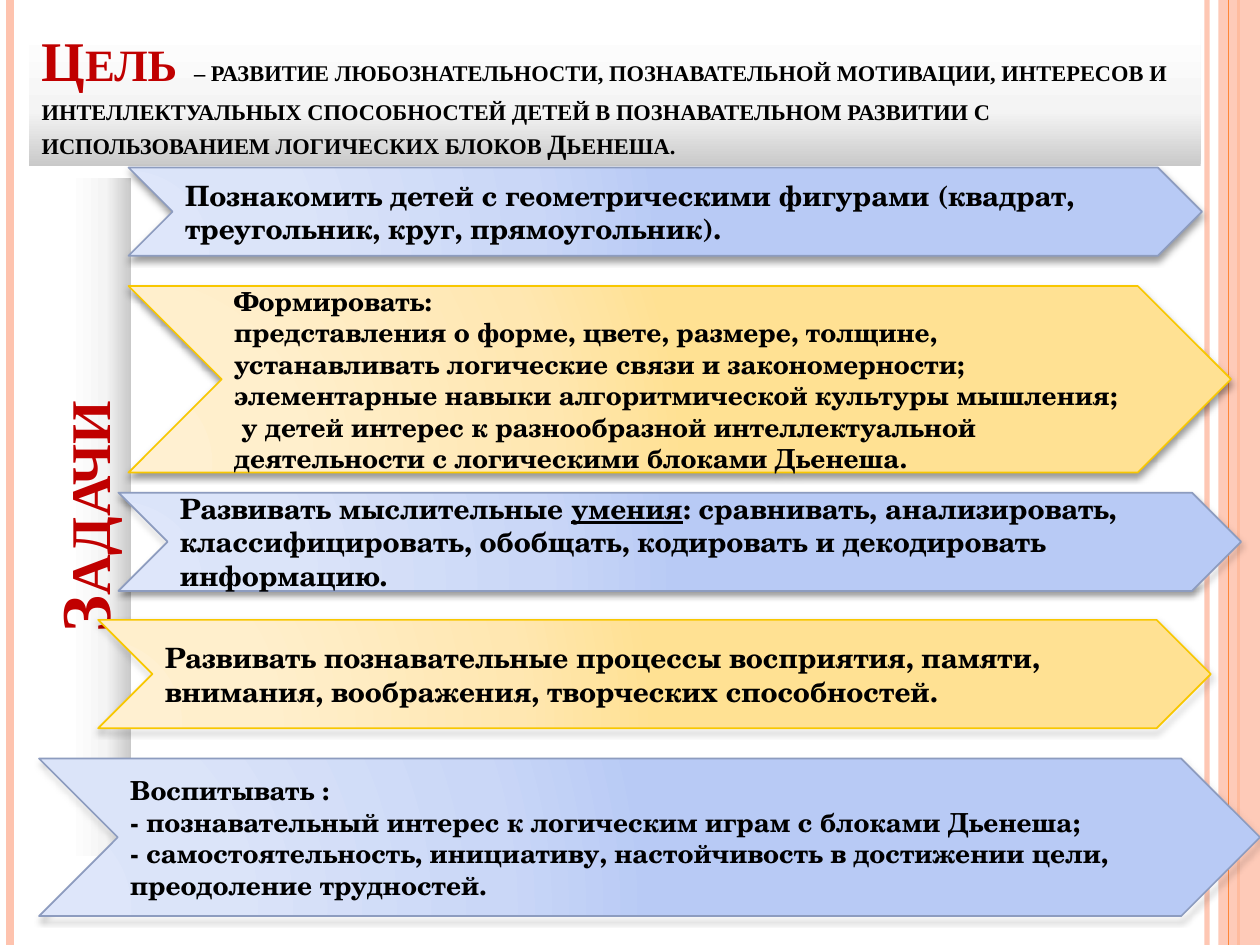
import pptx
import pptx.util
import pptx.oxml
import pptx.oxml.ns
import pptx.dml.color
import pptx.enum.shapes
import pptx.enum.text

Inches = pptx.util.Inches
Pt = pptx.util.Pt
qn = pptx.oxml.ns.qn
ALIGN = pptx.enum.text.PP_ALIGN
ANCHOR = pptx.enum.text.MSO_ANCHOR

COLORS = {
    "peach": "FEC3AE",
    "orange": "FE8637",
    "red": "C00000",
    "black": "000000",
    "blue_edge": "8D9CBF",
    "yellow_edge": "F8C700",
}
GREY = [(0, "C9C9C9"), (40, "F4F4F4"), (100, "FFFFFF")]
BLUE = [(0, "DEE6FA"), (30, "DBE4F9"), (75, "CAD7F7"), (100, "B8CAF5")]
YELLOW = [(0, "FFF0D1"), (30, "FFEFCC"), (75, "FFE7B1"), (100, "FFE193")]
UPRIGHT = '<a:lin ang="16200000" scaled="0"/>'
RADIAL = ('<a:path path="circle">'
          '<a:fillToRect l="5000" t="100000" r="120000" b="10000"/></a:path>')
SERIF = "Times New Roman"
SCHOOL = "TeX Gyre Schola"


def rgb(name):
    return pptx.dml.color.RGBColor.from_string(COLORS[name])


def place(shape, left, top, width, height):
    shape.left, shape.top = Inches(left), Inches(top)
    shape.width, shape.height = Inches(width), Inches(height)


def set_alpha(shape, percent):
    color = next(shape._element.spPr.iter(qn("a:srgbClr")))
    pptx.oxml.ns.qn("a:alpha")
    alpha = color.makeelement(qn("a:alpha"), {"val": str(percent * 1000)})
    color.append(alpha)


def set_gradient(shape, stops, direction):
    shape.fill.gradient()
    properties = shape._element.spPr
    stop_xml = "".join(
        f'<a:gs pos="{position * 1000}"><a:srgbClr val="{color}"/></a:gs>'
        for position, color in stops)
    gradient = pptx.oxml.parse_xml(
        f'<a:gradFill {pptx.oxml.ns.nsdecls("a")} rotWithShape="1">'
        f'<a:gsLst>{stop_xml}</a:gsLst>{direction}</a:gradFill>')
    properties.replace(properties.find(qn("a:gradFill")), gradient)


def set_shadow(shape):
    shape.shadow.inherit = False
    shadow = pptx.oxml.parse_xml(
        f'<a:outerShdw {pptx.oxml.ns.nsdecls("a")} blurRad="{Pt(4)}" dist="{Pt(2)}" '
        'dir="5400000" rotWithShape="0"><a:srgbClr val="000000">'
        '<a:alpha val="40000"/></a:srgbClr></a:outerShdw>')
    shape._element.spPr.find(qn("a:effectLst")).append(shadow)


def add_run(paragraph, text, font, size, color, small_caps=False, underline=False):
    run = paragraph.add_run()
    run.text = text
    run.font.name = font
    run.font.size = Pt(size)
    run.font.bold = True
    run.font.color.rgb = rgb(color)
    if underline:
        run.font.underline = True
    if small_caps:
        run.font._element.set("cap", "small")


def prepare_frame(shape, anchor):
    frame = shape.text_frame
    frame.word_wrap = True
    frame.auto_size = pptx.enum.text.MSO_AUTO_SIZE.NONE
    frame.vertical_anchor = anchor
    return frame


def add_stripe(slide, x, color, width, alpha=None):
    stripe = slide.shapes.add_connector(
        pptx.enum.shapes.MSO_CONNECTOR.STRAIGHT,
        Inches(x), Inches(0), Inches(x), Inches(7.5))
    stripe.line.color.rgb = rgb(color)
    stripe.line.width = Pt(width)
    stripe._element.spPr.append(pptx.oxml.parse_xml(
        f'<a:effectLst {pptx.oxml.ns.nsdecls("a")}/>'))
    if alpha:
        set_alpha(stripe, alpha)


def add_side_band(slide):
    band = slide.shapes.add_shape(
        pptx.enum.shapes.MSO_SHAPE.RECTANGLE,
        Inches(9.67), Inches(0), Inches(0.33), Inches(7.5))
    band.fill.solid()
    band.fill.fore_color.rgb = rgb("peach")
    band.line.fill.background()
    band.shadow.inherit = False
    set_alpha(band, 87)


def add_goal(slide):
    goal = slide.shapes.title
    place(goal, 0.23, 0.23, 9.3, 1.09)
    set_gradient(goal, GREY, UPRIGHT)
    paragraph = prepare_frame(goal, ANCHOR.BOTTOM).paragraphs[0]
    paragraph.alignment = ALIGN.LEFT
    add_run(paragraph, "Цель ", SERIF, 32, "red", small_caps=True)
    add_run(paragraph, " – развитие любознательности, познавательной мотивации, "
            "интересов и интеллектуальных способностей детей в познавательном "
            "развитии с использованием логических блоков Дьенеша.",
            SERIF, 16, "black", small_caps=True)


def add_tasks_heading(slide):
    heading = slide.shapes.add_textbox(
        Inches(-1.9), Inches(3.85), Inches(5.38), Inches(0.5))
    heading.rotation = 270
    set_gradient(heading, GREY, UPRIGHT)
    paragraph = prepare_frame(heading, ANCHOR.BOTTOM).paragraphs[0]
    paragraph.alignment = ALIGN.CENTER
    add_run(paragraph, "Задачи", SERIF, 40, "red", small_caps=True)


def add_task(slide, box, stops, edge, size, paragraphs):
    task = slide.shapes.add_shape(
        pptx.enum.shapes.MSO_SHAPE.CHEVRON, *(Inches(length) for length in box))
    set_gradient(task, stops, RADIAL)
    task.line.color.rgb = rgb(edge)
    task.line.width = Pt(1)
    set_shadow(task)
    frame = prepare_frame(task, ANCHOR.MIDDLE)
    for index, parts in enumerate(paragraphs):
        paragraph = frame.add_paragraph() if index else frame.paragraphs[0]
        paragraph.alignment = ALIGN.LEFT
        for part in parts:
            add_run(paragraph, part, SCHOOL, size, "black", underline=part == "умения")


def main():
    deck = pptx.Presentation()
    deck.slide_width, deck.slide_height = Inches(10), Inches(7.5)
    slide = deck.slides.add_slide(deck.slide_layouts[5])

    add_stripe(slide, 9.58, "peach", 3, alpha=93)
    add_stripe(slide, 0.08, "peach", 4.5)
    add_stripe(slide, 9.83, "orange", 1.5)
    add_side_band(slide)
    add_stripe(slide, 9.75, "orange", 0.75)
    add_goal(slide)
    add_tasks_heading(slide)

    blue, yellow = (BLUE, "blue_edge"), (YELLOW, "yellow_edge")
    tasks = [
        ((1.02, 1.33, 8.52, 0.7), blue, 16, [
            ["Познакомить детей с геометрическими фигурами (квадрат, треугольник, "
             "круг, прямоугольник)."]]),
        ((0.94, 3.91, 8.91, 0.78), blue, 16, [
            ["Развивать мыслительные ", "умения",
             ": сравнивать, анализировать, классифицировать, обобщать, кодировать "
             "и декодировать информацию."]]),
        ((0.78, 4.92, 8.83, 0.86), yellow, 16, [
            ["Развивать познавательные процессы восприятия, памяти, внимания, "
             "воображения, творческих способностей."]]),
        ((1.02, 2.27, 8.75, 1.48), yellow, 15, [
            ["Формировать:"],
            ["представления о форме, цвете, размере, толщине, устанавливать "
             "логические связи и закономерности;"],
            ["элементарные навыки алгоритмической культуры мышления;"],
            [" у детей интерес к разнообразной интеллектуальной деятельности "
             "с логическими блоками Дьенеша."]]),
        ((0.31, 6.02, 9.69, 1.25), blue, 15, [
            ["Воспитывать :"],
            ["- познавательный интерес к логическим играм с блоками Дьенеша;"],
            ["- самостоятельность, инициативу, настойчивость в достижении цели, "
             "преодоление трудностей."]]),
    ]
    for box, (stops, edge), size, paragraphs in tasks:
        add_task(slide, box, stops, edge, size, paragraphs)

    deck.save("out.pptx")


if __name__ == "__main__":
    main()
